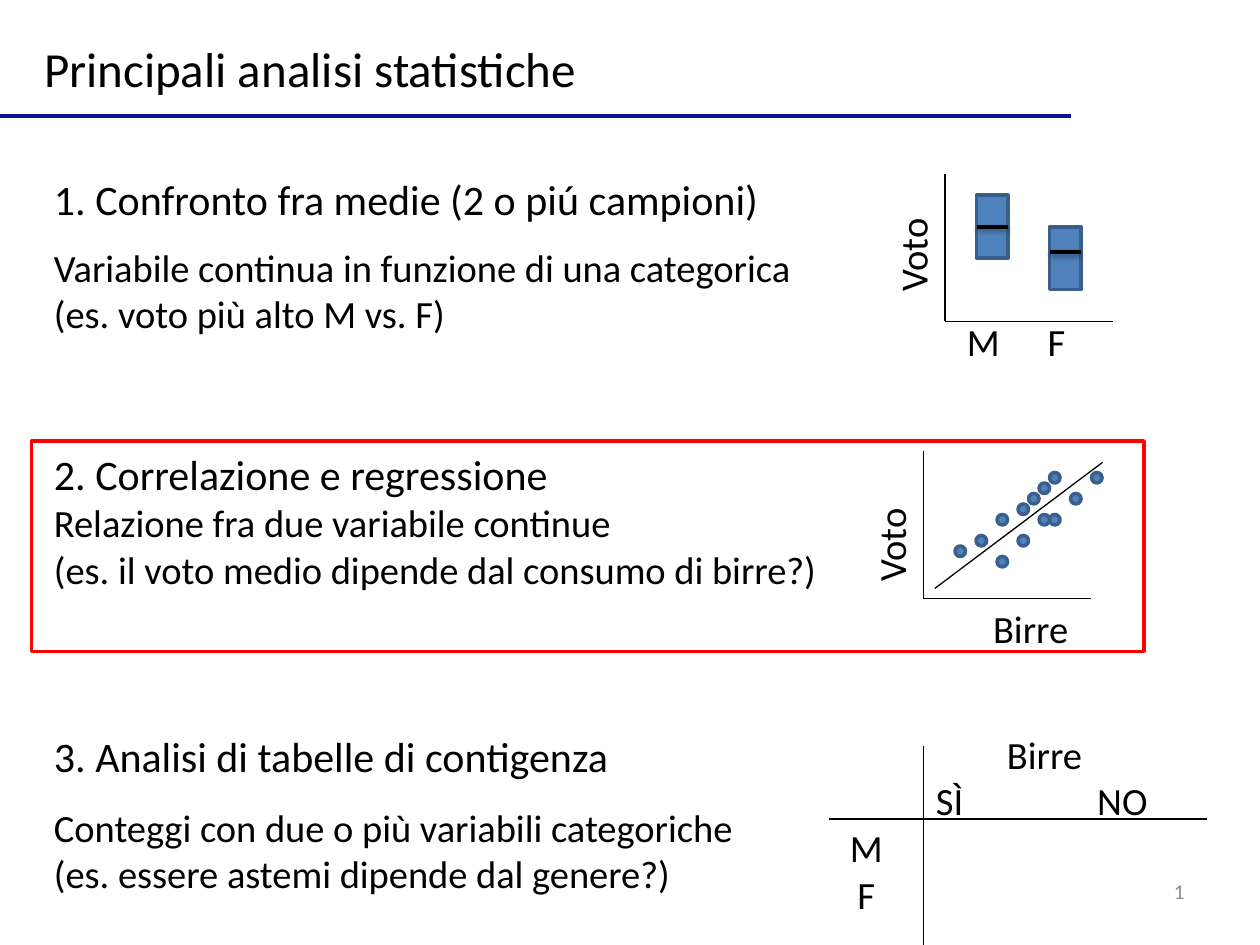
from lxml import etree
from pptx import Presentation
from pptx.dml.color import RGBColor
from pptx.enum.shapes import MSO_CONNECTOR, MSO_SHAPE
from pptx.enum.text import MSO_ANCHOR, MSO_AUTO_SIZE, PP_ALIGN
from pptx.oxml.ns import qn
from pptx.util import Inches, Pt

BLACK = RGBColor(0x00, 0x00, 0x00)
GRAY = RGBColor(0x8C, 0x8C, 0x8C)
NAVY = RGBColor(0x0C, 0x12, 0x90)
BLUE = RGBColor(0x4F, 0x81, 0xBD)
DARK_BLUE = RGBColor(0x3A, 0x5F, 0x8C)
RED = RGBColor(0xFF, 0x00, 0x00)

STRAIGHT = MSO_CONNECTOR.STRAIGHT
RECTANGLE, OVAL = MSO_SHAPE.RECTANGLE, MSO_SHAPE.OVAL
LEFT, CENTER, RIGHT = PP_ALIGN.LEFT, PP_ALIGN.CENTER, PP_ALIGN.RIGHT

FONT = "Calibri"
TEXT_LEFT = 0.33
UNIT = 1 / 12

# Heading, its top, description lines, their top
SECTIONS = [
    ("1. Confronto fra medie (2 o piú campioni)", 1.33,
     ["Variabile continua in funzione di una categorica",
      "(es. voto più alto M vs. F)"], 1.88),
    ("2. Correlazione e regressione", 3.51,
     ["Relazione fra due variabile continue",
      "(es. il voto medio dipende dal consumo di birre?)"], 3.91),
    ("3. Analisi di tabelle di contigenza", 5.75,
     ["Conteggi con due o più variabili categoriche",
      "(es. essere astemi dipende dal genere?)"], 6.33),
]

# Column and row of each dot, in units from the top left of the cloud
SCATTER_DOTS = [(2, 6), (4, 8), (6, 6), (6, 3), (7, 2), (9, 4), (4, 4),
                (0, 7), (8, 4), (8, 1), (9, 0), (13, 0), (11, 2)]


def format_text(shape, lines, size, align, color=BLACK, wrap=True):
    frame = shape.text_frame
    frame.text = "\n".join(lines)
    frame.word_wrap = wrap
    frame.auto_size = MSO_AUTO_SIZE.NONE
    frame.vertical_anchor = MSO_ANCHOR.MIDDLE
    for paragraph in frame.paragraphs:
        paragraph.alignment = align
        paragraph.font.name = FONT
        paragraph.font.size = Pt(size)
        paragraph.font.color.rgb = color


def add_text(slide, lines, left, top, width, height, size=22, align=LEFT,
             color=BLACK, wrap=True, rotation=0):
    box = slide.shapes.add_textbox(
        Inches(left), Inches(top), Inches(width), Inches(height))
    box.rotation = rotation
    format_text(box, lines, size, align, color, wrap)
    return box


def add_line(slide, start, end, color=BLACK, width=0.75, shadow=False):
    line = slide.shapes.add_connector(
        STRAIGHT, *(Inches(value) for value in (*start, *end)))
    line.line.color.rgb = color
    line.line.width = Pt(width)
    if not shadow:
        properties = line._element.find(qn("p:spPr"))
        etree.SubElement(properties, qn("a:effectLst"))


def add_outlined_shape(slide, kind, left, top, width, height,
                       fill=BLUE, outline=DARK_BLUE):
    shape = slide.shapes.add_shape(
        kind, Inches(left), Inches(top), Inches(width), Inches(height))
    shape.shadow.inherit = False
    if fill is None:
        shape.fill.background()
    else:
        shape.fill.solid()
        shape.fill.fore_color.rgb = fill
    shape.line.color.rgb = outline
    shape.line.width = Pt(2)


def add_axes(slide, left, top):
    corner = (left, top + 1.17)
    add_line(slide, (left, top), corner)
    add_line(slide, corner, (left + 1.33, top + 1.17))


def add_title(slide):
    title = slide.shapes.title
    title.left, title.top = Inches(0.25), Inches(0.25)
    title.width, title.height = Inches(4.47), Inches(0.57)
    format_text(title, ["Principali analisi statistiche"], 28, LEFT, wrap=False)
    add_line(slide, (0, 0.92), (8.5, 0.92), NAVY, 2)


def add_slide_number(slide):
    box = add_text(slide, ["1"], 7.17, 6.87, 2.33, 0.4, 12, RIGHT, GRAY)
    run = box.text_frame.paragraphs[0].runs[0]._r
    run.tag = qn("a:fld")
    run.set("id", "{B6F15528-21DE-4FAA-801E-634DDDAF4B2B}")
    run.set("type", "slidenum")


def add_sections(slide):
    for heading, heading_top, lines, lines_top in SECTIONS:
        add_text(slide, [heading], TEXT_LEFT, heading_top, 5.84, 0.5, 24,
                 wrap=False)
        add_text(slide, lines, TEXT_LEFT, lines_top, 6.75, 0.84, wrap=False)


def add_box_plot(slide):
    add_axes(slide, 7.5, 1.38)
    add_text(slide, ["Voto"], 6.49, 1.79, 1.5, 0.47, align=CENTER, rotation=270)
    for label, label_left, left, top, median in [
            ("M", 7.47, 7.75, 1.55, 1.8), ("F", 8.05, 8.33, 1.8, 2)]:
        add_outlined_shape(slide, RECTANGLE, left, top, 0.25, 0.5)
        add_line(slide, (left, median), (left + 0.25, median), width=2,
                 shadow=True)
        add_text(slide, [label], label_left, 2.47, 0.67, 0.47, align=CENTER)


def add_scatter_plot(slide):
    add_axes(slide, 7.33, 3.58)
    add_text(slide, ["Voto"], 6.11, 4.09, 1.92, 0.47, align=CENTER, rotation=270)
    add_text(slide, ["Birre"], 7.22, 4.75, 1.92, 0.47, align=CENTER)
    add_line(slide, (7.42, 4.67), (8.75, 3.67))
    for column, row in SCATTER_DOTS:
        add_outlined_shape(slide, OVAL, 7.58 + column * UNIT,
                           3.75 + row * UNIT, UNIT, UNIT)


def add_contingency_sketch(slide):
    add_line(slide, (6.58, 6.5), (9.58, 6.5))
    add_line(slide, (7.33, 5.92), (7.33, 7.5))
    add_text(slide, ["M", "F"], 6.5, 6.49, 0.75, 0.84, align=CENTER)
    box = add_text(slide, ["Birre", "SÌ\tNO"], 7.33, 5.75, 1.92, 0.84)
    birre, answers = box.text_frame.paragraphs
    birre.alignment = CENTER
    properties = answers._p.get_or_add_pPr()
    tabs = etree.Element(qn("a:tabLst"))
    etree.SubElement(tabs, qn("a:tab"), pos=str(Inches(1.28)), algn="l")
    properties.insert(0, tabs)


def main():
    presentation = Presentation()
    presentation.slide_width = Inches(10)
    presentation.slide_height = Inches(7.5)
    title_only = presentation.slide_layouts[5]
    slide = presentation.slides.add_slide(title_only)

    add_slide_number(slide)
    add_title(slide)
    add_sections(slide)
    add_box_plot(slide)
    add_scatter_plot(slide)
    add_contingency_sketch(slide)
    add_outlined_shape(slide, RECTANGLE, 0.25, 3.5, 8.83, 1.67,
                       fill=None, outline=RED)
    presentation.save("out.pptx")


if __name__ == "__main__":
    main()
